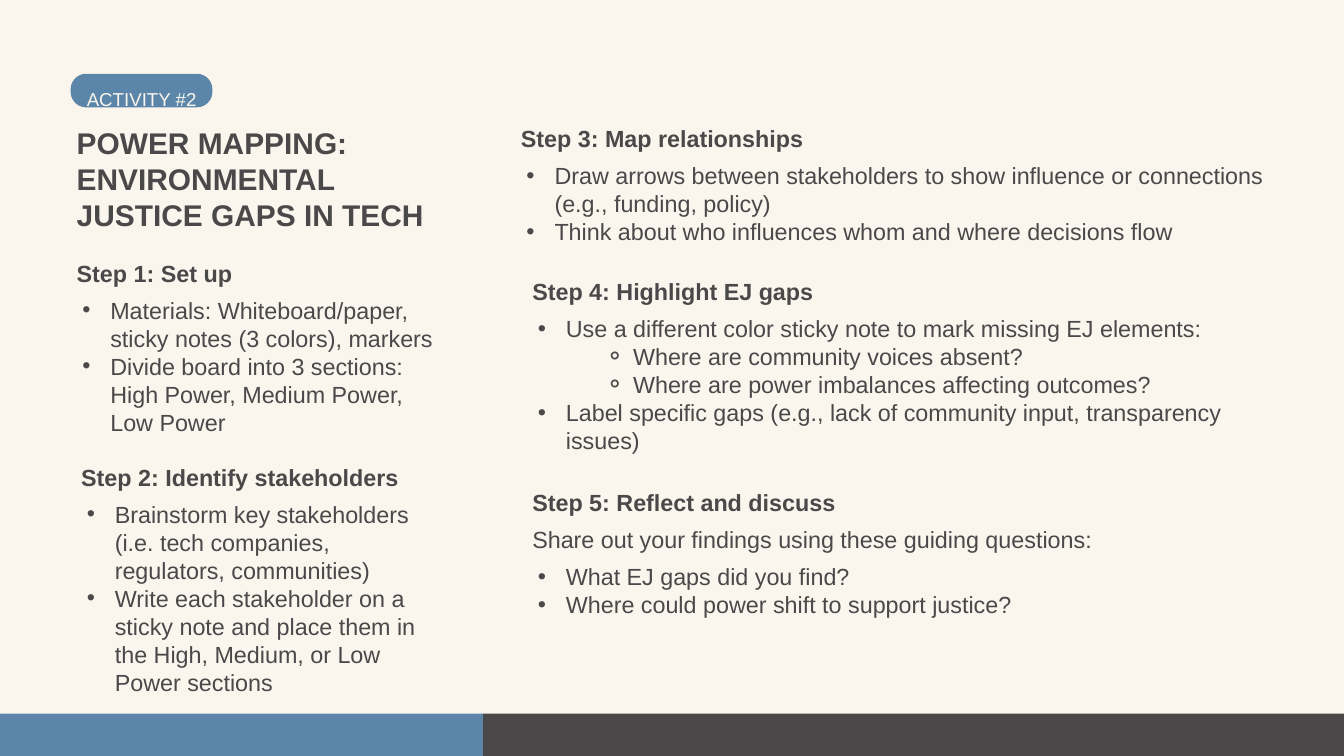
import pptx
import pptx.util
import pptx.dml.color
import pptx.enum.shapes
import pptx.enum.text
import pptx.oxml
import pptx.oxml.ns
from pptx.util import Cm, Pt

COLORS = {"cream": "FAF6EE", "blue": "5B85A9", "dark": "4A4849"}
BODY = {"size": Pt(25), "bold": False}
HEADING = {"size": Pt(25), "bold": True}
TITLE = {"size": Pt(32), "bold": True}
BADGE = {"size": Pt(20), "bold": False}
BULLETS = {1: ("•", 1.27), 2: ("⚬", 3.81)}
HANGING = 1.06
LINE = 1.07
LIST_OFFSET = 1.4

STEPS = [
    ("Step 1: Set up", 2.9, 9.78, 14, 5, [
        (1, "Materials: Whiteboard/paper, sticky notes (3 colors), markers", 0),
        (1, "Divide board into 3 sections: High Power, Medium Power, Low Power", 0)]),
    ("Step 2: Identify stakeholders", 3.07, 17.5, 13.64, 7, [
        (1, "Brainstorm key stakeholders (i.e. tech companies, regulators, communities)", 0),
        (1, "Write each stakeholder on a sticky note and place them in the High, "
            "Medium, or Low Power sections", 0)]),
    ("Step 3: Map relationships", 19.69, 4.7, 28.63, 3, [
        (1, "Draw arrows between stakeholders to show influence or connections "
            "(e.g., funding, policy)", 0),
        (1, "Think about who influences whom and where decisions flow", 0)]),
    ("Step 4: Highlight EJ gaps", 20.12, 10.49, 28.63, 5, [
        (1, "Use a different color sticky note to mark missing EJ elements:", 0),
        (2, "Where are community voices absent?", 0),
        (2, "Where are power imbalances affecting outcomes?", 0),
        (1, "Label specific gaps (e.g., lack of community input, transparency issues)", 0)]),
    ("Step 5: Reflect and discuss", 20.12, 18.44, 28.63, 3.3, [
        (0, "Share out your findings using these guiding questions:", 0),
        (1, "What EJ gaps did you find?", 10),
        (1, "Where could power shift to support justice?", 0)]),
]


def rgb(name):
    return pptx.dml.color.RGBColor.from_string(COLORS[name])


def set_attributes(target, values):
    for name, value in values.items():
        setattr(target, name, value)


def add_bullet(p, level):
    char, indent = BULLETS[level]
    pPr = p._p.get_or_add_pPr()
    pPr.set("marL", str(Cm(indent)))
    pPr.set("indent", str(-Cm(HANGING)))
    ns = pptx.oxml.ns.nsdecls("a")
    for xml in (f'<a:buClr {ns}><a:srgbClr val="{COLORS["dark"]}"/></a:buClr>',
                f'<a:buFont {ns} typeface="Arial"/>',
                f'<a:buChar {ns} char="{char}"/>'):
        pPr.append(pptx.oxml.parse_xml(xml))


def fill_text(sp, box, items, style, spacing, color="dark"):
    set_attributes(sp, dict(zip(("left", "top", "width", "height"), map(Cm, box))))
    tf = sp.text_frame
    set_attributes(tf, {
        "word_wrap": True,
        "auto_size": pptx.enum.text.MSO_AUTO_SIZE.NONE,
        "vertical_anchor": pptx.enum.text.MSO_ANCHOR.TOP,
        "margin_left": 0, "margin_top": 0, "margin_right": 0, "margin_bottom": 0,
    })
    for i, (level, text, before) in enumerate(items):
        p = tf.add_paragraph() if i else tf.paragraphs[0]
        if level:
            add_bullet(p, level)
        set_attributes(p, {
            "level": level,
            "alignment": pptx.enum.text.PP_ALIGN.LEFT,
            "line_spacing": spacing,
            "space_before": Pt(before),
        })
        r = p.add_run()
        r.text = text
        set_attributes(r.font, {"name": "Arial", **style})
        r.font.color.rgb = rgb(color)


def add_textbox(s):
    return s.shapes.add_textbox(0, 0, Cm(1), Cm(1))


def add_block(s, kind, box, color):
    sp = s.shapes.add_shape(kind, *map(Cm, box))
    sp.shadow.inherit = False
    sp.fill.solid()
    sp.fill.fore_color.rgb = rgb(color)
    sp.line.fill.background()
    return sp


def add_step(s, list_shape, step):
    heading, left, top, width, lines, items = step
    fill_text(add_textbox(s), (left, top, width, LINE),
              [(0, heading, 0)], HEADING, Pt(30))
    fill_text(list_shape, (left, top + LIST_OFFSET, width, lines * LINE),
              items, BODY, Pt(30))


def add_badge(s):
    badge = add_block(s, pptx.enum.shapes.MSO_SHAPE.ROUNDED_RECTANGLE,
                      (2.67, 2.79, 5.36, 1.27), "blue")
    badge.adjustments[0] = 0.46
    fill_text(add_textbox(s), (3.28, 3, 23.7, 0.86),
              [(0, "ACTIVITY #2", 0)], BADGE, 1.4, "cream")


def main():
    prs = pptx.Presentation()
    prs.slide_width, prs.slide_height = Cm(50.8), Cm(28.58)
    s = prs.slides.add_slide(prs.slide_layouts.get_by_name("Comparison"))
    s.background.fill.solid()
    s.background.fill.fore_color.rgb = rgb("cream")

    title, *lists = s.placeholders
    lists.append(add_textbox(s))

    rectangle = pptx.enum.shapes.MSO_SHAPE.RECTANGLE
    add_block(s, rectangle, (18.25, 26.98, 36.03, 1.6), "dark")
    add_block(s, rectangle, (-1.5, 26.98, 19.75, 1.6), "blue")
    fill_text(title, (2.9, 4.7, 13.64, 4.11),
              [(0, "POWER MAPPING: ENVIRONMENTAL JUSTICE GAPS IN TECH", 0)],
              TITLE, Pt(38.5))
    add_badge(s)
    for list_shape, step in zip(lists, STEPS):
        add_step(s, list_shape, step)

    prs.save("out.pptx")


if __name__ == "__main__":
    main()
